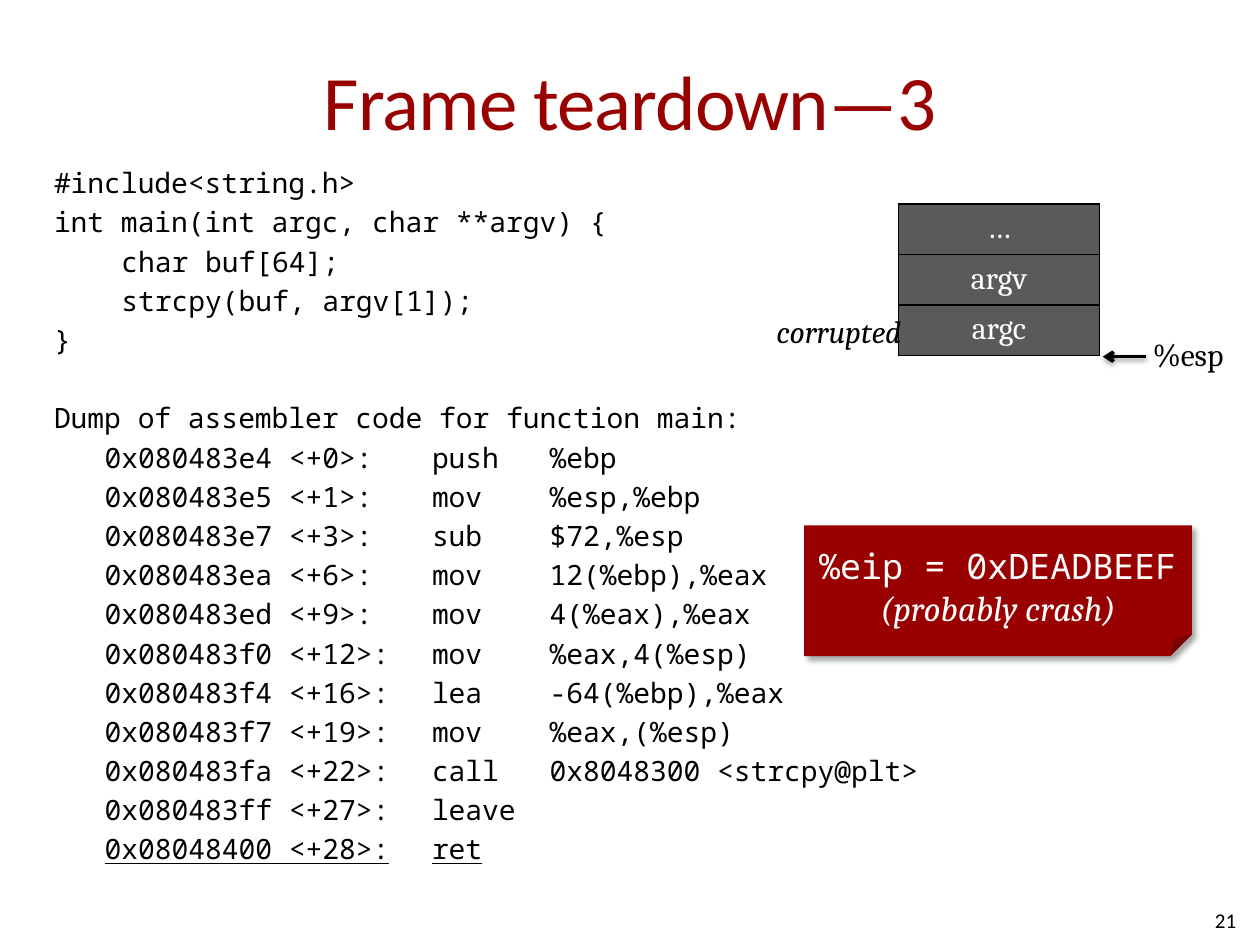
from dataclasses import dataclass
from lxml.etree import SubElement
from pptx import Presentation
from pptx.dml.color import RGBColor
from pptx.enum.shapes import MSO_CONNECTOR, MSO_SHAPE
from pptx.enum.text import MSO_ANCHOR, PP_ALIGN
from pptx.oxml.ns import qn
from pptx.util import Cm, Pt

HUES = {"red": "990000", "black": "000000", "white": "FFFFFF", "gray": "595A5A"}
SANS, SERIF, MONO = "Calibri", "Cambria", "Noto Sans Mono"
LEFT, MID, RIGHT = PP_ALIGN.LEFT, PP_ALIGN.CENTER, PP_ALIGN.RIGHT
PITCH = Pt(22.4)
C_TABS = [Cm(1.36)]
ASM_TABS = [Cm(1.02), Cm(7.62), Cm(9.99)]


@dataclass
class Style:
    face: str
    size: int
    hue: str = "black"
    align: PP_ALIGN = LEFT
    slant: bool = False


@dataclass
class Label:
    text: str
    box: tuple  # left, top, width, height in cm
    style: Style
    wrap: bool = True
    anchor: MSO_ANCHOR = MSO_ANCHOR.TOP


@dataclass
class Step:
    addr: str
    op: str
    args: str = ""
    mark: bool = False


LABELS = [
    Label("21", (19.25, 18.03, 5.92, 1.02), Style(SANS, 12, align=RIGHT),
          anchor=MSO_ANCHOR.MIDDLE),
    Label("%esp", (22.99, 6.63, 2.06, 1.02), Style(SERIF, 18), wrap=False),
    Label("corrupted", (15.09, 6.17, 3.33, 1.02),
          Style(SERIF, 18, align=RIGHT, slant=True), wrap=False),
]
SOURCE = ["#include<string.h>", "int main(int argc, char **argv) {",
          "\tchar buf[64];", "\tstrcpy(buf, argv[1]);", "}"]
STEPS = [
    Step("0x080483e4 <+0>:", "push", "%ebp"),
    Step("0x080483e5 <+1>:", "mov", "%esp,%ebp"),
    Step("0x080483e7 <+3>:", "sub", "$72,%esp"),
    Step("0x080483ea <+6>:", "mov", "12(%ebp),%eax"),
    Step("0x080483ed <+9>:", "mov", "4(%eax),%eax"),
    Step("0x080483f0 <+12>:", "mov", "%eax,4(%esp)"),
    Step("0x080483f4 <+16>:", "lea", "-64(%ebp),%eax"),
    Step("0x080483f7 <+19>:", "mov", "%eax,(%esp)"),
    Step("0x080483fa <+22>:", "call", "0x8048300 <strcpy@plt>"),
    Step("0x080483ff <+27>:", "leave"),
    Step("0x08048400 <+28>:", "ret", mark=True),
]


def rgb(hue: str) -> RGBColor:
    return RGBColor.from_string(HUES[hue])


def dress(para, style: Style) -> None:
    para.alignment = style.align
    font = para.font
    font.name, font.size, font.italic = style.face, Pt(style.size), style.slant
    font.color.rgb = rgb(style.hue)


def add_box(slide, box: tuple):
    return slide.shapes.add_textbox(*map(Cm, box)).text_frame


def add_label(slide, label: Label):
    frame = add_box(slide, label.box)
    frame.word_wrap, frame.vertical_anchor = label.wrap, label.anchor
    para = frame.paragraphs[0]
    para.add_run().text = label.text
    dress(para, label.style)
    return para


def add_line(frame, first: bool, tabs: list):
    para = frame.paragraphs[0] if first else frame.add_paragraph()
    para.line_spacing = PITCH
    stops = SubElement(para._p.get_or_add_pPr(), qn("a:tabLst"))
    for stop in tabs:
        SubElement(stops, qn("a:tab"), pos=str(int(stop)), algn="l")
    dress(para, Style(MONO, 16))
    return para


def add_code(slide) -> None:
    frame = add_box(slide, (0.84, 3.18, 18.42, 15.04))
    frame.word_wrap, frame.margin_top = True, Cm(0.05)
    for i, text in enumerate(SOURCE):
        add_line(frame, i == 0, C_TABS).add_run().text = text
    head = add_line(frame, False, C_TABS)
    head.space_before = PITCH
    head.add_run().text = "Dump of assembler code for function main:"
    for step in STEPS:
        para = add_line(frame, False, ASM_TABS)
        para.add_run().text = "\t"
        run = para.add_run()
        run.text = "\t".join(filter(None, (step.addr, step.op, step.args)))
        if step.mark:
            run.font.underline = True


def add_stack(slide, names: list) -> None:
    size = Cm(18.11), Cm(4.11), Cm(4.06), Cm(1.02) * len(names)
    table = slide.shapes.add_table(len(names), 1, *size).table
    for row, name in enumerate(names):
        cell = table.cell(row, 0)
        para = cell.text_frame.paragraphs[0]
        para.add_run().text = name
        dress(para, Style(SERIF, 18, "white", MID))
        para.font.bold = False
        props = cell._tc.get_or_add_tcPr()
        for side in ("lnL", "lnR", "lnT", "lnB"):
            edge = SubElement(props, qn(f"a:{side}"), w=str(int(Pt(1))))
            fill = SubElement(edge, qn("a:solidFill"))
            SubElement(fill, qn("a:srgbClr"), val=HUES["black"])
        cell.fill.solid()
        cell.fill.fore_color.rgb = rgb("gray")


def add_shade(shape, alpha: int, blur: float, dist: float, angle: int) -> None:
    fx = SubElement(shape._element.spPr, qn("a:effectLst"))
    shade = SubElement(fx, qn("a:outerShdw"), blurRad=str(int(Pt(blur))),
                       dist=str(int(Pt(dist))), dir=str(angle * 60000),
                       rotWithShape="0")
    tint = SubElement(shade, qn("a:srgbClr"), val=HUES["black"])
    SubElement(tint, qn("a:alpha"), val=str(alpha * 1000))


def add_arrow(slide) -> None:
    ends = Cm(23.11), Cm(7.19), Cm(22.23), Cm(7.19)
    arrow = slide.shapes.add_connector(MSO_CONNECTOR.STRAIGHT, *ends)
    arrow.line.color.rgb, arrow.line.width = rgb("black"), Pt(2)
    SubElement(arrow.line._get_or_add_ln(), qn("a:tailEnd"), type="arrow")
    add_shade(arrow, 38, 3.1, 1.6, 90)


def add_note(slide) -> None:
    box = map(Cm, (16.21, 10.59, 7.82, 2.64))
    note = slide.shapes.add_shape(MSO_SHAPE.FOLDED_CORNER, *box)
    note.fill.solid()
    note.fill.fore_color.rgb = rgb("red")
    note.line.fill.background()
    add_shade(note, 35, 3.1, 2.8, 45)
    frame = note.text_frame
    frame.word_wrap, frame.vertical_anchor = True, MSO_ANCHOR.TOP
    frame.margin_top = Cm(0.38)
    top, low = frame.paragraphs[0], frame.add_paragraph()
    top.add_run().text = "%eip = 0xDEADBEEF"
    low.add_run().text = "(probably crash)"
    dress(top, Style(MONO, 20, "white", MID))
    dress(low, Style(SERIF, 20, "white", MID, slant=True))


def main() -> None:
    deck = Presentation()
    deck.slide_width, deck.slide_height = Cm(25.4), Cm(19.05)
    slide = deck.slides.add_slide(deck.slide_layouts[6])
    # Title, slightly tightened
    title = add_label(slide, Label("Frame teardown—3", (1.27, 0.43, 22.86, 3.18),
                                   Style(SANS, 44, "red", MID),
                                   anchor=MSO_ANCHOR.MIDDLE))
    title._p.pPr.find(qn("a:defRPr")).set("spc", "-50")
    # Source and its assembly
    add_code(slide)
    # Stack with its pointer
    add_stack(slide, ["…", "argv", "argc"])
    add_arrow(slide)
    for label in LABELS:
        add_label(slide, label)
    # Outcome
    add_note(slide)
    deck.save("out.pptx")


if __name__ == "__main__":
    main()
